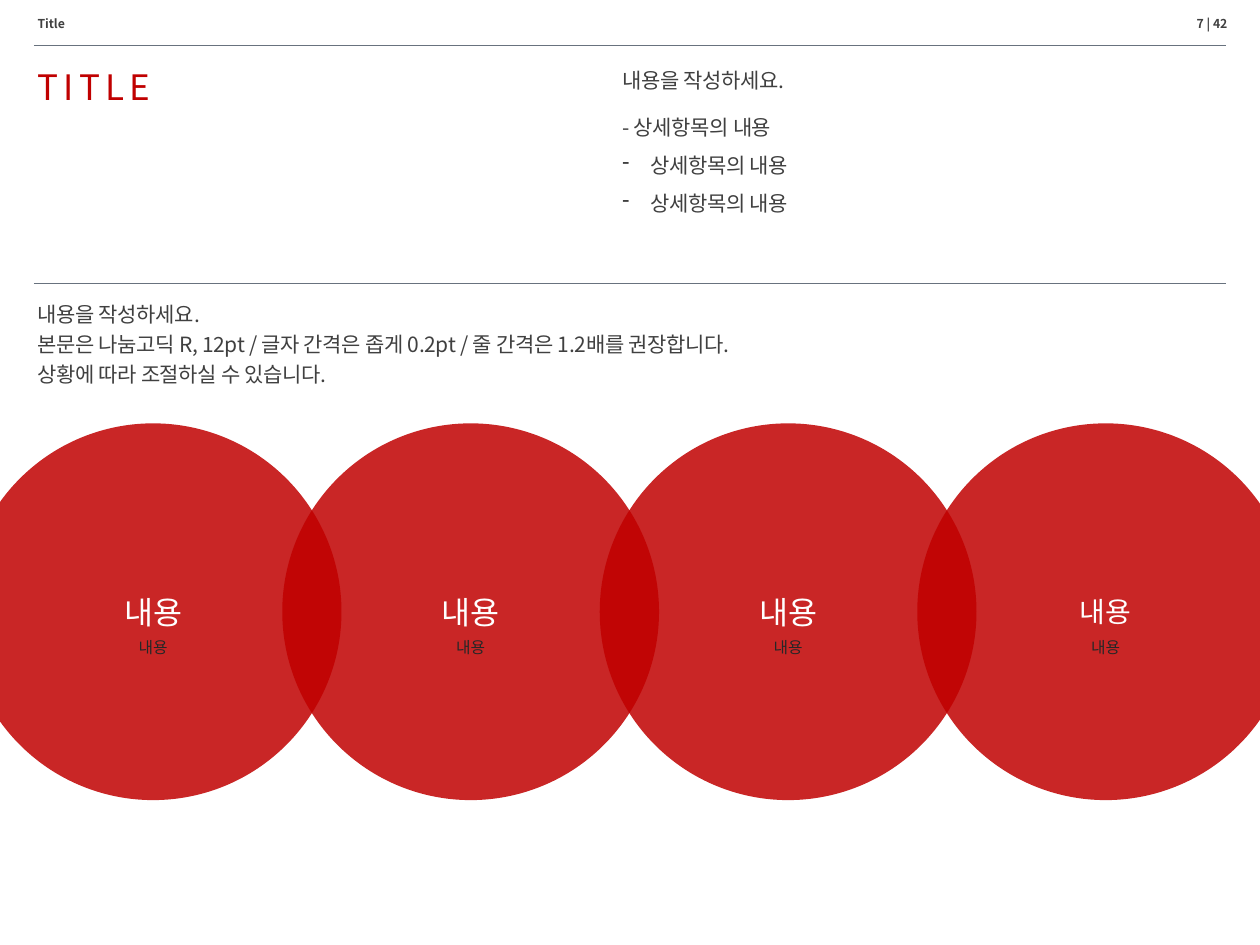
from dataclasses import dataclass
from typing import NamedTuple

from lxml import etree
from pptx import Presentation
from pptx import util as u
from pptx.dml.color import RGBColor
from pptx.enum import shapes, text
from pptx.oxml import ns


@dataclass(frozen=True)
class Theme:
    font: str = "Noto Sans CJK KR"
    red: str = "C00000"
    body: str = "404040"
    caption: str = "262626"
    white: str = "FFFFFF"
    rule: str = "68727E"
    title_pt: float = 20
    body_pt: float = 12
    caption_pt: float = 9
    header_pt: float = 7
    tight: float = -0.2
    opacity: int = 85


class Box(NamedTuple):
    """Percent of the slide's width (x, w) and height (y, h)."""
    x: float
    y: float
    w: float
    h: float


class Circle(NamedTuple):
    label: str
    caption: str
    label_pt: float


T = Theme()
LEFT, MID = 2, 48.4
ITEM = "상세항목의 내용"
CIRCLES = [Circle("내용", "내용", pt) for pt in (18, 18, 18, 16)]
PITCH, DIAMETER, FIRST_X, CIRCLE_Y = 25.2, 29.9, -2.8, 44.8
CAPTION = Box(0, 66.8, 4.5, 3.47)

prs = Presentation()
prs.slide_width, prs.slide_height = u.Inches(10), u.Inches(7.5)
s = prs.slides.add_slide(prs.slide_layouts[6])


def px(share: float) -> int:
    return round(prs.slide_width * share / 100)


def py(share: float) -> int:
    return round(prs.slide_height * share / 100)


def place(box: Box) -> tuple:
    return px(box.x), py(box.y), px(box.w), py(box.h)


def write(tf, content: str, *, size: float, color: str, align=None, spacing=None,
          track: float = 0, bold: bool = False, bullets: tuple = ()) -> None:
    """Fill a text frame, one paragraph per line; bullets lists the dashed lines."""
    for i, line in enumerate(content.split("\n")):
        p = tf.paragraphs[0] if i == 0 else tf.add_paragraph()
        p.alignment, p.line_spacing = align, spacing
        if i in bullets:
            pPr = p._p.get_or_add_pPr()
            indent = u.Inches(0.19)
            pPr.set("marL", str(indent))
            pPr.set("indent", str(-indent))
            etree.SubElement(pPr, ns.qn("a:buChar"), char="-")
        r = p.add_run()
        r.text = line
        r.font.name, r.font.size, r.font.bold = T.font, u.Pt(size), bold
        r.font.color.rgb = RGBColor.from_string(color)
        rPr = r._r.get_or_add_rPr()
        rPr.set("spc", str(round(track * 100)))
        etree.SubElement(rPr, ns.qn("a:ea"), typeface=T.font)


def add_text(box: Box, content: str, *, wrap: bool = True, **style) -> None:
    tf = s.shapes.add_textbox(*place(box)).text_frame
    tf.word_wrap = wrap
    tf.auto_size = text.MSO_AUTO_SIZE.SHAPE_TO_FIT_TEXT
    write(tf, content, **style)


def add_rule(y: float) -> None:
    c = s.shapes.add_connector(shapes.MSO_CONNECTOR.STRAIGHT,
                               px(2.7), py(y), px(97.3), py(y))
    c.line.color.rgb = RGBColor.from_string(T.rule)
    c.line.width = u.Pt(0.25)
    etree.SubElement(c._element.spPr, ns.qn("a:effectLst"))


def add_circle(column: int, circle: Circle) -> None:
    x = FIRST_X + column * PITCH
    sp = s.shapes.add_shape(shapes.MSO_SHAPE.OVAL, px(x), py(CIRCLE_Y),
                            px(DIAMETER), px(DIAMETER))
    sp.shadow.inherit = False
    sp.fill.solid()
    sp.fill.fore_color.rgb = RGBColor.from_string(T.red)
    color = sp._element.spPr.find(".//" + ns.qn("a:srgbClr"))
    etree.SubElement(color, ns.qn("a:alpha"), val=str(T.opacity * 1000))
    sp.line.fill.background()
    sp.text_frame.vertical_anchor = text.MSO_ANCHOR.MIDDLE
    write(sp.text_frame, circle.label, size=circle.label_pt, color=T.white,
          align=text.PP_ALIGN.CENTER)


def add_caption(column: int, circle: Circle) -> None:
    x = FIRST_X + column * PITCH + (DIAMETER - CAPTION.w) / 2
    add_text(CAPTION._replace(x=x), circle.caption, wrap=False, size=T.caption_pt,
             color=T.caption, align=text.PP_ALIGN.CENTER)


# Rules
for rule_y in (4.8, 30):
    add_rule(rule_y)

# Title and introduction
body = dict(size=T.body_pt, color=T.body, track=T.tight)
add_text(Box(LEFT, 6.8, 24.4, 5.33), "TITLE", size=T.title_pt, color=T.red,
         spacing=0.9, track=3)
add_text(Box(LEFT, 30.67, 95.3, 11.07),
         "내용을 작성하세요.\n"
         "본문은 나눔고딕 R, 12pt / 글자 간격은 좁게 0.2pt / 줄 간격은 1.2배를 권장합니다.\n"
         "상황에 따라 조절하실 수 있습니다.", spacing=1.2, **body)

# Overlapping circles
for col, item in enumerate(CIRCLES):
    add_circle(col, item)

# Detail list
add_text(Box(MID, 6.93, 25.2, 3.6), "내용을 작성하세요.", spacing=0.85, **body)
add_text(Box(MID, 10.13, 25.2, 13.47), f"- {ITEM}\n {ITEM}\n {ITEM}",
         spacing=1.5, bullets=(1, 2), **body)

# Captions under the circle labels
for col, item in enumerate(CIRCLES):
    add_caption(col, item)

# Page header
header = dict(size=T.header_pt, color=T.body, spacing=0.8, bold=True)
add_text(Box(LEFT, 1.33, 25.6, 2.67), "Title", **header)
add_text(Box(72.8, 1.33, 25.6, 2.67), "7 | 42", align=text.PP_ALIGN.RIGHT, **header)

prs.save("out.pptx")
